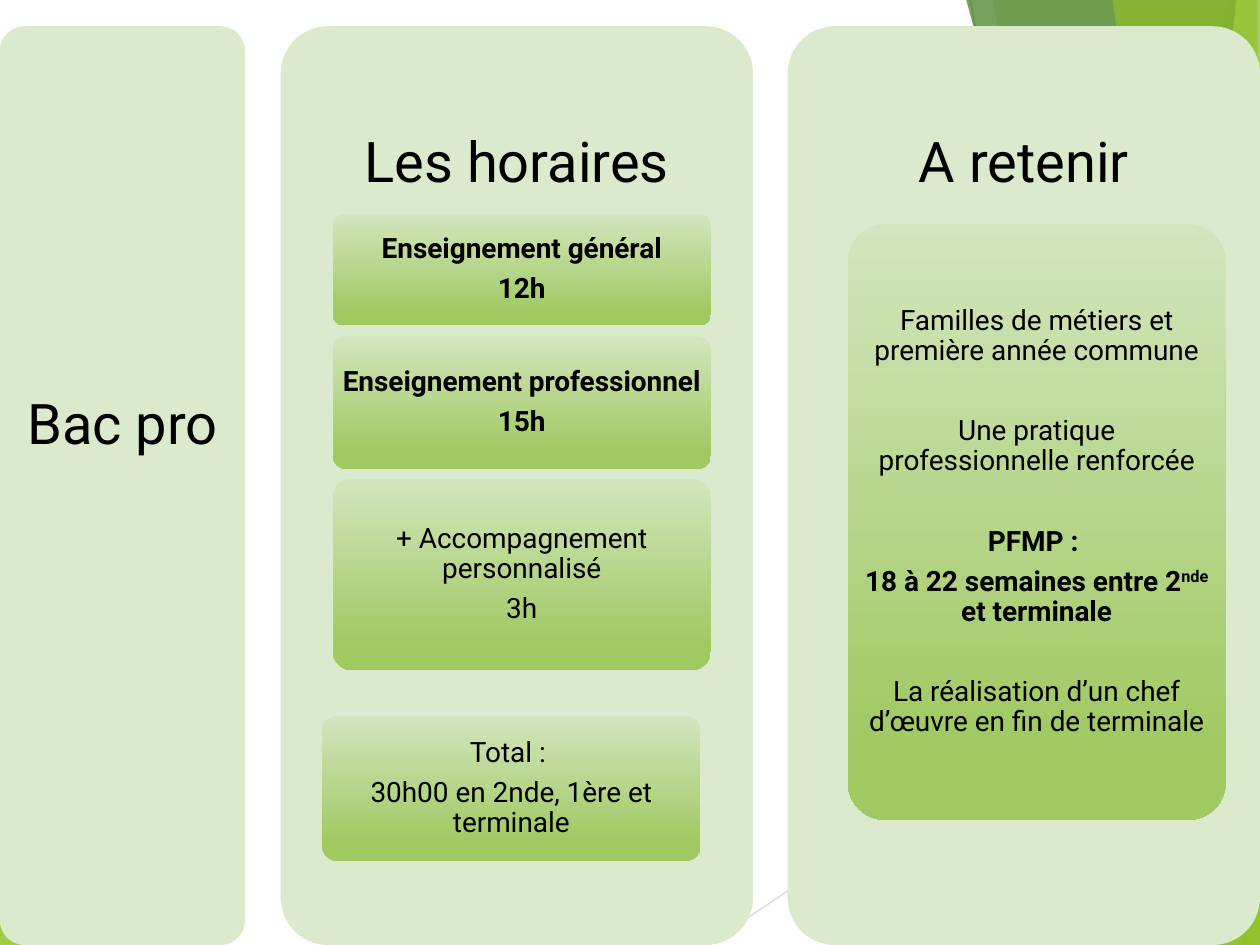
import pptx
import pptx.dml.color
import pptx.enum.shapes
import pptx.enum.text
import pptx.oxml
import pptx.oxml.ns
import pptx.util
from pptx.dml.color import RGBColor
from pptx.util import Cm, Pt

BLACK = RGBColor(0x00, 0x00, 0x00)
PANEL = RGBColor(0xDB, 0xE9, 0xCD)
CARD_TOP = RGBColor(0xD3, 0xE5, 0xBE)
CARD_BOTTOM = RGBColor(0xA0, 0xC9, 0x62)
GREEN = RGBColor(0x90, 0xC2, 0x26)
MID_GREEN = RGBColor(0x54, 0xA0, 0x21)
DARK_GREEN = RGBColor(0x3F, 0x78, 0x19)
LIME = RGBColor(0xC0, 0xE4, 0x74)
LIGHT_GREY = RGBColor(0xD9, 0xD9, 0xD9)
GREY = RGBColor(0xBF, 0xBF, 0xBF)

FONT = "Roboto"
WIDTH, HEIGHT = 25.4, 19.05
PANEL_TOP = 0.53
PANEL_HEIGHT = HEIGHT - PANEL_TOP
CARD_WIDTH = 7.62
HEADING_SIZE, BODY_SIZE = 32, 16
LINE_GAP, GROUP_GAP = 5.6, 28.6

# Corners shared by the facets on the right edge
TOP_RIGHT, BOTTOM_RIGHT = (WIDTH, 0), (WIDTH, HEIGHT)

# Colour, opacity in percent, outline in cm
LEFT_FACET = (GREEN, 85, [(0, 11.15), (1.24, HEIGHT), (0, HEIGHT)])
RIGHT_FACETS = [
    (GREEN, 30, [(24.77, 0), (19.15, HEIGHT), BOTTOM_RIGHT, TOP_RIGHT]),
    (GREEN, 20, [(20.02, 0), (23.34, HEIGHT), BOTTOM_RIGHT, TOP_RIGHT]),
    (MID_GREEN, 72, [(18.44, HEIGHT), (WIDTH, 10.9), BOTTOM_RIGHT]),
    (DARK_GREEN, 70, [(19.48, 0), (24.64, HEIGHT), BOTTOM_RIGHT, TOP_RIGHT]),
    (LIME, 70, [(24.92, 0), (23.04, HEIGHT), BOTTOM_RIGHT, TOP_RIGHT]),
    (GREEN, 65, [(22.43, 0), (25.04, HEIGHT), BOTTOM_RIGHT, (25.35, 0)]),
    (GREEN, 80, [(22.38, HEIGHT), (WIDTH, 13.59), BOTTOM_RIGHT]),
]

# Left, top, height in cm, then paragraphs: text parts, bold, gap after
HOUR_CARDS = [
    (6.71, 4.32, 2.24, [(["Enseignement général"], True, LINE_GAP),
                        (["12h"], True, LINE_GAP)]),
    (6.71, 6.78, 2.67, [(["Enseignement professionnel"], True, LINE_GAP),
                        (["15h"], True, LINE_GAP)]),
    (6.71, 9.65, 3.86, [(["+ Accompagnement personnalisé"], False, LINE_GAP),
                        (["3h"], False, LINE_GAP)]),
    (6.5, 14.43, 2.92, [(["Total : "], False, LINE_GAP),
                        (["30h00 en 2nde, 1ère et terminale"], False, LINE_GAP)]),
]
# A second text part is set as superscript
KEY_POINTS_CARD = (17.09, 4.52, 12.01, [
    (["Familles de métiers et première année commune"], False, GROUP_GAP),
    (["Une pratique professionnelle renforcée"], False, GROUP_GAP),
    (["PFMP : "], True, LINE_GAP),
    (["18 à 22 semaines entre 2", "nde", " et terminale"], True, GROUP_GAP),
    (["La réalisation d’un chef d’œuvre en fin de terminale"], False, LINE_GAP),
])


def add_facet(slide, color, opacity, points):
    corners = [(Cm(x), Cm(y)) for x, y in points]
    builder = slide.shapes.build_freeform(*corners[0])
    builder.add_line_segments(corners[1:], close=True)
    shape = builder.convert_to_shape()
    shape.shadow.inherit = False
    shape.fill.solid()
    shape.fill.fore_color.rgb = color
    shape.line.fill.background()
    color_element = shape.fill._xPr.find(".//" + pptx.oxml.ns.qn("a:srgbClr"))
    alpha = color_element.makeelement(
        pptx.oxml.ns.qn("a:alpha"), {"val": str(opacity * 1000)})
    color_element.append(alpha)


def add_thin_line(slide, start, end, color):
    connector = slide.shapes.add_connector(
        pptx.enum.shapes.MSO_CONNECTOR.STRAIGHT,
        *(Cm(value) for value in start + end))
    connector.line.color.rgb = color
    connector.line.width = Pt(0.75)
    properties = connector._element.spPr
    properties.append(
        properties.makeelement(pptx.oxml.ns.qn("a:effectLst"), {}))


def add_rounded_box(slide, left, top, width, height):
    shape = slide.shapes.add_shape(
        pptx.enum.shapes.MSO_SHAPE.ROUNDED_RECTANGLE,
        Cm(left), Cm(top), Cm(width), Cm(height))
    shape.adjustments[0] = 0.1
    shape.shadow.inherit = False
    shape.line.fill.background()
    return shape


def add_panel(slide, left, width):
    panel = add_rounded_box(slide, left, PANEL_TOP, width, PANEL_HEIGHT)
    panel.fill.solid()
    panel.fill.fore_color.rgb = PANEL


def prepare_frame(shape, horizontal, vertical):
    frame = shape.text_frame
    frame.word_wrap = True
    frame.auto_size = pptx.enum.text.MSO_AUTO_SIZE.NONE
    frame.vertical_anchor = pptx.enum.text.MSO_ANCHOR.MIDDLE
    frame.margin_left = frame.margin_right = Cm(horizontal)
    frame.margin_top = frame.margin_bottom = Cm(vertical)
    return frame


def fill_paragraph(paragraph, parts, size, bold, gap):
    paragraph.alignment = pptx.enum.text.PP_ALIGN.CENTER
    paragraph.line_spacing = 0.9
    paragraph.space_before = Pt(0)
    paragraph.space_after = Pt(gap)
    for index, part in enumerate(parts):
        run = paragraph.add_run()
        run.text = part
        run.font.name = FONT
        run.font.size = Pt(size)
        run.font.bold = bold
        run.font.color.rgb = BLACK
        if index == 1:
            run.font._element.set("baseline", "30000")


def write_heading(shape, text, margin):
    frame = prepare_frame(shape, margin, margin)
    fill_paragraph(frame.paragraphs[0], [text], HEADING_SIZE, False, 0)


def add_heading(slide, left, width, text):
    box = slide.shapes.add_textbox(
        Cm(left), Cm(PANEL_TOP), Cm(width), Cm(5.56))
    write_heading(box, text, 0.33)


def place_title(slide, text):
    title = slide.shapes.title
    title.left, title.top, title.width, title.height = (
        Cm(0), Cm(7.1), Cm(4.94), Cm(3))
    write_heading(title, text, 0.15)
    # Bring the title in front of its panel
    slide.shapes._spTree.append(title._element)


def add_card(slide, left, top, height, paragraphs):
    card = add_rounded_box(slide, left, top, CARD_WIDTH, height)
    card.fill.gradient()
    card.fill.gradient_angle = 270
    stops = card.fill.gradient_stops
    for stop, position, color in zip(stops, (0, 0.88), (CARD_TOP, CARD_BOTTOM)):
        stop.position = position
        stop.color.rgb = color
    frame = prepare_frame(card, 0.1, 0.08)
    for index, (parts, bold, gap) in enumerate(paragraphs):
        paragraph = frame.add_paragraph() if index else frame.paragraphs[0]
        fill_paragraph(paragraph, parts, BODY_SIZE, bold, gap)


def main():
    presentation = pptx.Presentation()
    presentation.slide_width = Cm(WIDTH)
    presentation.slide_height = Cm(HEIGHT)
    slide = presentation.slides.add_slide(presentation.slide_layouts[5])

    # Background facets and lines
    add_facet(slide, *LEFT_FACET)
    add_thin_line(slide, (14.25, HEIGHT), (WIDTH, 11.61), LIGHT_GREY)
    add_thin_line(slide, (19.56, 0), (22.96, HEIGHT), GREY)
    for facet in RIGHT_FACETS:
        add_facet(slide, *facet)

    # Title column
    add_panel(slide, 0, 4.94)
    place_title(slide, "Bac pro")

    # Content columns
    for left, heading, cards in [
        (5.66, "Les horaires", HOUR_CARDS),
        (15.88, "A retenir", [KEY_POINTS_CARD]),
    ]:
        add_panel(slide, left, 9.52)
        add_heading(slide, left, 9.52, heading)
        for card in cards:
            add_card(slide, *card)

    presentation.save("out.pptx")


if __name__ == "__main__":
    main()
